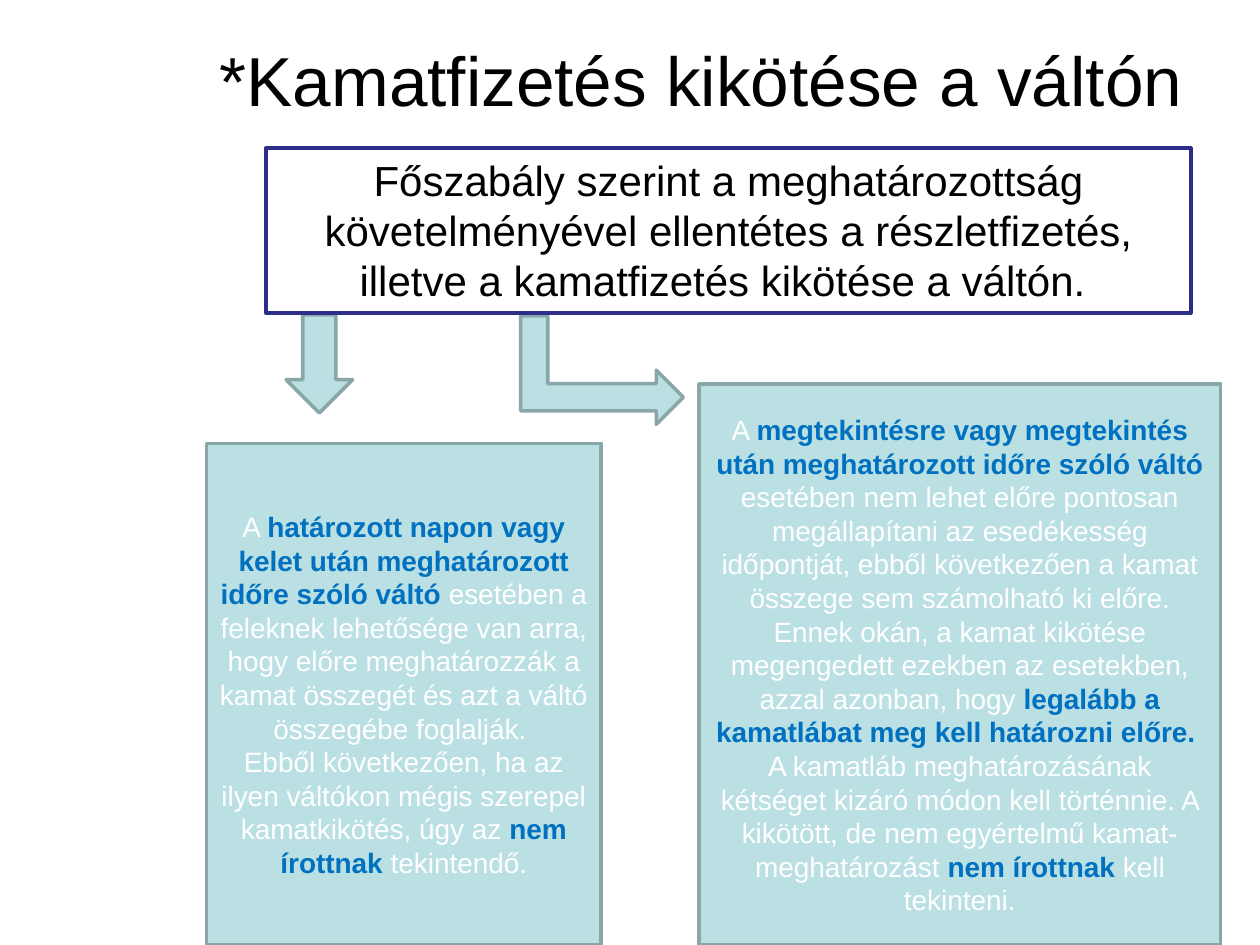
import pptx
import pptx.dml.color
import pptx.enum.shapes
import pptx.enum.text
import pptx.util

Pt = pptx.util.Pt
SHAPES = pptx.enum.shapes.MSO_SHAPE
ANCHOR = pptx.enum.text.MSO_ANCHOR
COLORS = {
    "black": "000000",
    "white": "FFFFFF",
    "emphasis": "0070C0",
    "panel": "BBE0E3",
    "panel_line": "8AA6A8",
    "rule_line": "2D2D8A",
}
TITLE = "*Kamatfizetés kikötése a váltón"
RULE = (
    "Főszabály szerint a meghatározottság követelményével ellentétes a "
    "részletfizetés, illetve a kamatfizetés kikötése a váltón. "
)

# Each paragraph alternates plain and emphasised runs, starting with plain
FIXED_DATE = [
    [
        "A ",
        "határozott napon vagy kelet után meghatározott időre szóló váltó ",
        "esetében a feleknek lehetősége van arra, hogy előre meghatározzák a "
        "kamat összegét és azt a váltó összegébe foglalják. ",
    ],
    [
        "Ebből következően, ha az ilyen váltókon mégis szerepel kamatkikötés, úgy az ",
        "nem írottnak ",
        "tekintendő.",
    ],
]
AT_SIGHT = [
    [
        "A ",
        "megtekintésre vagy megtekintés után meghatározott időre szóló váltó ",
        "esetében nem lehet előre pontosan megállapítani az esedékesség időpontját, "
        "ebből következően a kamat összege sem számolható ki előre. Ennek okán, a "
        "kamat kikötése megengedett ezekben az esetekben, azzal azonban, hogy ",
        "legalább a kamatlábat meg kell határozni előre. ",
    ],
    [
        "A kamatláb meghatározásának kétséget kizáró módon kell történnie. "
        "A kikötött, de nem egyértelmű kamat-meghatározást ",
        "nem írottnak ",
        "kell tekinteni.",
    ],
]


def rgb(name):
    return pptx.dml.color.RGBColor.from_string(COLORS[name])


def place(shape, left, top, width, height):
    box = {"left": left, "top": top, "width": width, "height": height}
    for name, value in box.items():
        setattr(shape, name, Pt(value))


def write_text(shape, paragraphs, size, color, anchor):
    frame = shape.text_frame
    settings = {
        "word_wrap": True,
        "vertical_anchor": anchor,
        "auto_size": pptx.enum.text.MSO_AUTO_SIZE.NONE,
    }
    for name, value in settings.items():
        setattr(frame, name, value)
    for index, texts in enumerate(paragraphs):
        paragraph = frame.add_paragraph() if index else frame.paragraphs[0]
        paragraph.alignment = pptx.enum.text.PP_ALIGN.CENTER
        for position, text in enumerate(texts):
            emphasised = position % 2 == 1
            run = paragraph.add_run()
            run.text = text
            font_format = {"name": "Arial", "size": Pt(size), "bold": emphasised}
            for name, value in font_format.items():
                setattr(run.font, name, value)
            run.font.color.rgb = rgb("emphasis" if emphasised else color)


def add_title(slide):
    title = slide.shapes.title
    place(title, 112, 0, 577.5, 90)
    write_text(title, [[TITLE]], 39.6, "black", ANCHOR.MIDDLE)


def add_shape(slide, kind, box, fill="panel", line="panel_line"):
    shape = slide.shapes.add_shape(kind, *map(Pt, box))
    shape.shadow.inherit = False
    shape.fill.solid()
    shape.fill.fore_color.rgb = rgb(fill)
    shape.line.color.rgb = rgb(line)
    shape.line.width = Pt(2)
    return shape


def add_panel(slide, box, paragraphs):
    panel = add_shape(slide, SHAPES.RECTANGLE, box)
    write_text(panel, paragraphs, 16, "white", ANCHOR.MIDDLE)


def main():
    presentation = pptx.Presentation()
    presentation.slide_width = Pt(720)
    presentation.slide_height = Pt(540)
    slide = presentation.slides.add_slide(presentation.slide_layouts[5])
    add_title(slide)

    # The two cases, each with the arrow leading to it
    add_shape(slide, SHAPES.DOWN_ARROW, (163.5, 180, 38, 56))
    add_panel(slide, (118, 253.5, 225.5, 286.5), FIXED_DATE)
    add_panel(slide, (399.5, 219.5, 298, 320.5), AT_SIGHT)
    bent_arrow = add_shape(slide, SHAPES.BENT_UP_ARROW, (313, 165, 62, 93))
    bent_arrow.rotation = 90

    # General rule, on top of the arrow ends
    rule = add_shape(
        slide, SHAPES.RECTANGLE, (152, 84.5, 528.5, 94.5), "white", "rule_line"
    )
    write_text(rule, [[RULE]], 24, "black", ANCHOR.TOP)

    presentation.save("out.pptx")


if __name__ == "__main__":
    main()
